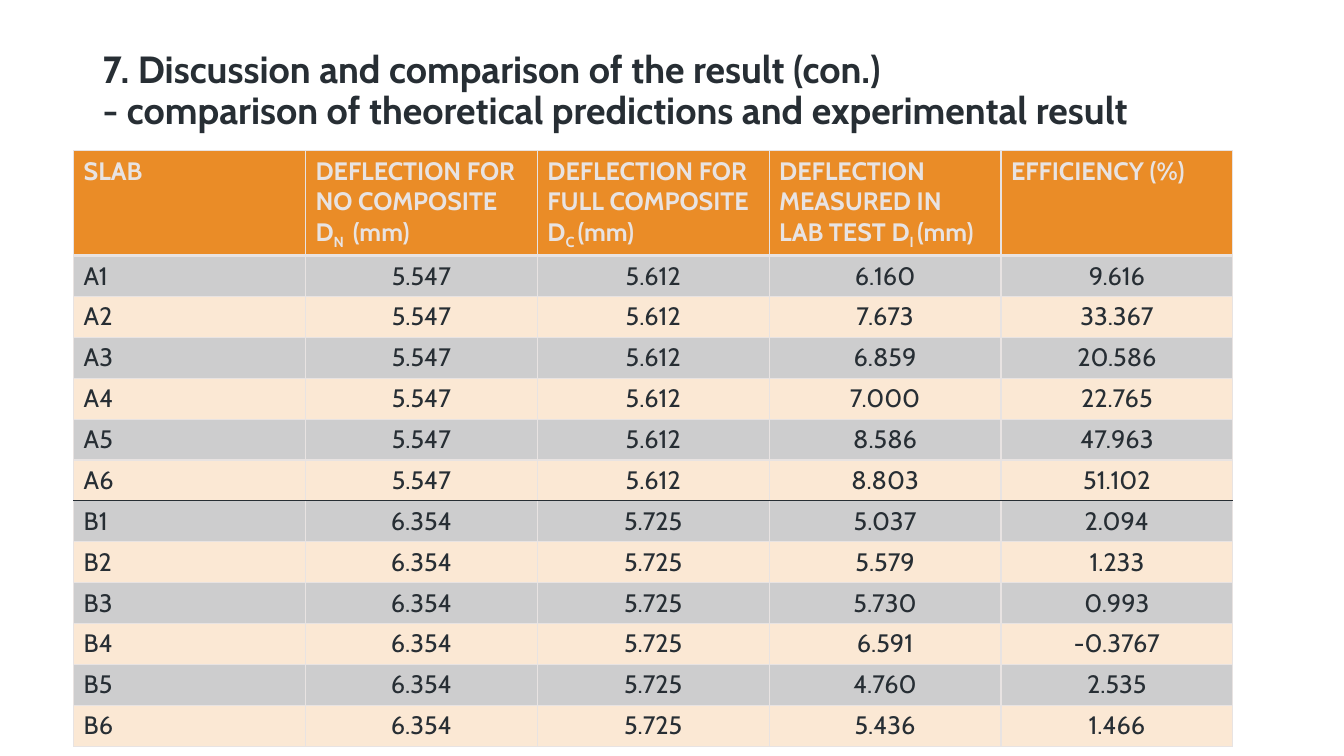
from lxml.etree import SubElement
from pptx import Presentation
from pptx.dml.color import RGBColor
from pptx.enum.text import MSO_ANCHOR, PP_ALIGN
from pptx.oxml.ns import qn
from pptx.util import Pt

FONT = "Cabin"
DARK = "272E34"
PALE = "E8E3E2"
ORANGE = "EA8C27"
GREY = "CDCDCE"
CREAM = "FBE8D4"

TITLE = [
    "7. Discussion and comparison of the result (con.)",
    "- comparison of theoretical predictions and experimental result",
]
HEADERS = [
    ("SLAB",),
    ("DEFLECTION FOR NO COMPOSITE D", "N ", " (mm)"),
    ("DEFLECTION FOR FULL COMPOSITE D", "C ", "(mm)"),
    ("DEFLECTION MEASURED IN LAB TEST D", "I ", "(mm)"),
    ("EFFICIENCY (%)",),
]
SERIES = [
    ("A", "5.547", "5.612", [
        ("6.160", "9.616"), ("7.673", "33.367"), ("6.859", "20.586"),
        ("7.000", "22.765"), ("8.586", "47.963"), ("8.803", "51.102"),
    ]),
    ("B", "6.354", "5.725", [
        ("5.037", "2.094"), ("5.579", "1.233"), ("5.730", "0.993"),
        ("6.591", "-0.3767"), ("4.760", "2.535"), ("5.436", "1.466"),
    ]),
]
COLUMN_WIDTH = 165.6
HEADER_HEIGHT = 72.5
ROW_HEIGHT = 29.2


def color(value):
    return RGBColor.from_string(value)


def add_span(para, text, size, ink, bold=False, subscript=False):
    span = para.add_run()
    span.text = text
    span.font.name = FONT
    span.font.size = Pt(size)
    span.font.bold = bold
    span.font.color.rgb = color(ink)
    if subscript:
        span.font._element.set("baseline", "-25000")


def add_title(page, lines):
    box = page.shapes.add_textbox(Pt(66.2), Pt(33.1), Pt(828), Pt(75))
    frame = box.text_frame
    frame.word_wrap = True
    frame.vertical_anchor = MSO_ANCHOR.TOP
    para = frame.paragraphs[0]
    para.line_spacing = 0.9
    for index, line in enumerate(lines):
        if index:
            para.add_line_break()
        add_span(para, line, 27, DARK, bold=True)


def set_borders(cell, top, bottom):
    properties = cell._tc.get_or_add_tcPr()
    sides = {"lnL": (PALE, 1), "lnR": (PALE, 1), "lnT": top, "lnB": bottom}
    for side, (ink, width) in sides.items():
        line = SubElement(properties, qn(f"a:{side}"), w=str(int(Pt(width))))
        fill = SubElement(line, qn("a:solidFill"))
        SubElement(fill, qn("a:srgbClr"), val=ink)


def style_cell(cell, fill, top, bottom):
    set_borders(cell, top, bottom)
    cell.fill.solid()
    cell.fill.fore_color.rgb = color(fill)


def data_rows():
    return [
        (f"{name}{number}", no_composite, full_composite, measured, efficiency)
        for name, no_composite, full_composite, results in SERIES
        for number, (measured, efficiency) in enumerate(results, 1)
    ]


def add_results(page):
    rows = data_rows()
    frame = page.shapes.add_table(
        len(rows) + 1, len(HEADERS), Pt(52.6), Pt(107.6),
        Pt(COLUMN_WIDTH * len(HEADERS)),
        Pt(HEADER_HEIGHT + ROW_HEIGHT * len(rows)),
    )
    table = frame.table
    for column in table.columns:
        column.width = Pt(COLUMN_WIDTH)
    for index, row in enumerate(table.rows):
        row.height = Pt(ROW_HEIGHT if index else HEADER_HEIGHT)

    rules = [(PALE, 1)] * (len(rows) + 2)
    rules[1] = (PALE, 3)
    rules[1 + len(SERIES[0][3])] = (DARK, 1)

    for column, parts in enumerate(HEADERS):
        cell = table.cell(0, column)
        style_cell(cell, ORANGE, rules[0], rules[1])
        para = cell.text_frame.paragraphs[0]
        for index, part in enumerate(parts):
            add_span(para, part, 18, PALE, bold=True, subscript=index == 1)

    for row, values in enumerate(rows, 1):
        for column, value in enumerate(values):
            cell = table.cell(row, column)
            style_cell(cell, GREY if row % 2 else CREAM, rules[row], rules[row + 1])
            para = cell.text_frame.paragraphs[0]
            para.alignment = PP_ALIGN.CENTER if column else PP_ALIGN.LEFT
            add_span(para, value, 18, DARK)


def main():
    deck = Presentation()
    deck.slide_width = Pt(960)
    deck.slide_height = Pt(540)
    page = deck.slides.add_slide(deck.slide_layouts[6])
    add_title(page, TITLE)
    add_results(page)
    deck.save("out.pptx")


if __name__ == "__main__":
    main()
